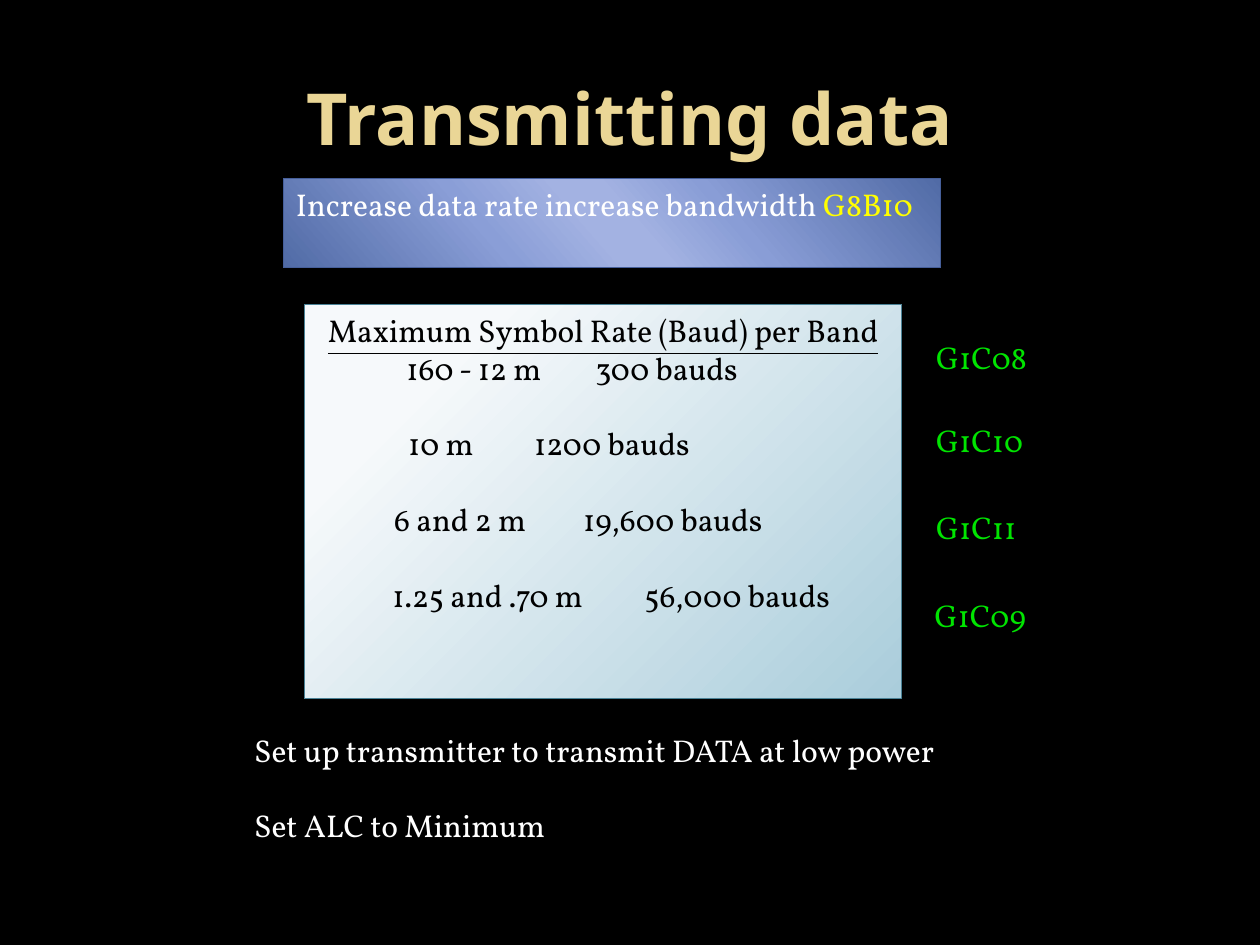
from lxml.etree import SubElement
from pptx import Presentation
from pptx.dml.color import RGBColor
from pptx.enum.shapes import MSO_SHAPE
from pptx.enum.text import MSO_ANCHOR as ANCHOR, PP_ALIGN as ALIGN
from pptx.oxml.ns import qn
from pptx.util import Pt

BLACK = RGBColor(0x00, 0x00, 0x00)
WHITE = RGBColor(0xFF, 0xFF, 0xFF)
GOLD = RGBColor(0xEA, 0xD6, 0x96)
YELLOW = RGBColor(0xFF, 0xFF, 0x00)
GREEN = RGBColor(0x00, 0xE4, 0x00)
BLUE_EDGE = RGBColor(0x46, 0x5F, 0x9A)
TEAL_EDGE = RGBColor(0x4A, 0x82, 0x96)
NAVY = RGBColor(0x51, 0x6B, 0xA6)
LILAC = RGBColor(0xA3, 0xB2, 0xE2)
BANNER_STOPS = [(0, NAVY), (33, RGBColor(0x89, 0x9D, 0xD6)), (47, LILAC),
                (53, LILAC), (68, RGBColor(0x8A, 0x9E, 0xD7)), (100, NAVY)]
PANEL_STOPS = [(20, RGBColor(0xF6, 0xF9, 0xFB)), (100, RGBColor(0xAA, 0xCD, 0xDB))]

# Content
TITLE = "Transmitting data"
BANNER = [("Increase data rate increase bandwidth ", WHITE), ("G8B10", YELLOW)]
HEADING = "Maximum Symbol Rate (Baud) per Band"
RATES = [  # band, its indent, rate, centre of the rate
    ("160 - 12 m", 51, "300 bauds", 235),
    ("10 m", 52, "1200 bauds", 231),
    ("6 and 2 m", 44, "19,600 bauds", 231),
    ("1.25 and .70 m", 43, "56,000 bauds", 231),
]
CODES = [  # question code, left, top
    ("G1C08", 527.8, 189.4),
    ("G1C10", 527.8, 236.9),
    ("G1C11", 527.8, 286.6),
    ("G1C09", 527, 337),
]
NOTES = ["Set up transmitter to transmit DATA at low power", "Set ALC to Minimum"]
LINE_GAP = 21.6  # one empty line of 18 pt text


def add_text(p, text, color=WHITE, size=18, font="Vollkorn", bold=False,
             underline=False, align=ALIGN.LEFT, before=0):
    p.alignment = align
    p.space_before = Pt(before)
    r = p.add_run()
    r.text = text
    r.font.name, r.font.size = font, Pt(size)
    r.font.bold, r.font.underline = bold, underline
    r.font.color.rgb = color


def add_box(slide, left, top, width, height, anchor=ANCHOR.TOP):
    tf = slide.shapes.add_textbox(Pt(left), Pt(top), Pt(width), Pt(height)).text_frame
    tf.word_wrap = True
    tf.vertical_anchor = anchor
    return tf


def add_panel(slide, left, top, width, height, stops, edge, angle=None):
    """Rectangle with a linear gradient, or a radial one from its top left corner."""
    sp = slide.shapes.add_shape(MSO_SHAPE.RECTANGLE, Pt(left), Pt(top),
                                Pt(width), Pt(height))
    sp.shadow.inherit = False
    sp.line.color.rgb, sp.line.width = edge, Pt(0.75)
    sp.fill.gradient()
    grad = sp._element.spPr.find(qn("a:gradFill"))
    for child in list(grad):
        grad.remove(child)
    gs_list = SubElement(grad, qn("a:gsLst"))
    for pos, color in stops:
        gs = SubElement(gs_list, qn("a:gs"), pos=str(pos * 1000))
        SubElement(gs, qn("a:srgbClr"), val=str(color))
    if angle is None:
        radial = SubElement(grad, qn("a:path"), path="circle")
        SubElement(radial, qn("a:fillToRect"), l="-15000", t="-15000",
                   r="115000", b="115000")
    else:
        SubElement(grad, qn("a:lin"), ang=str(angle * 60000), scaled="0")
    tf = sp.text_frame
    tf.word_wrap = True
    tf.vertical_anchor = ANCHOR.TOP
    return tf


def set_columns(p, indent, centre):
    """Indent the first column and centre the second on a tab stop."""
    pPr = p._p.get_or_add_pPr()
    pPr.set("marL", str(Pt(indent)))
    pPr.set("indent", "0")
    tabs = SubElement(pPr, qn("a:tabLst"))
    SubElement(tabs, qn("a:tab"), pos=str(Pt(centre)), algn="ctr")


prs = Presentation()
prs.slide_width, prs.slide_height = Pt(720), Pt(540)
s = prs.slides.add_slide(prs.slide_layouts[6])
s.background.fill.solid()
s.background.fill.fore_color.rgb = BLACK

# Title
tf = add_box(s, 36, 21.6, 648, 90, ANCHOR.MIDDLE)
add_text(tf.paragraphs[0], TITLE, GOLD, size=41, font="Noto Sans", bold=True,
         align=ALIGN.CENTER)

# Bandwidth banner
tf = add_panel(s, 162, 102, 375.4, 51, BANNER_STOPS, BLUE_EDGE, angle=139)
for text, color in BANNER:
    add_text(tf.paragraphs[0], text, color)

# Symbol rate panel
tf = add_panel(s, 174.2, 174.2, 341, 225, PANEL_STOPS, TEAL_EDGE)
add_text(tf.paragraphs[0], HEADING, BLACK, underline=True, align=ALIGN.CENTER)
for i, (band, indent, rate, centre) in enumerate(RATES):
    p = tf.add_paragraph()
    set_columns(p, indent, centre)
    add_text(p, f"{band}\t{rate}", BLACK, before=LINE_GAP if i else 0)

# Question codes
for code, left, top in CODES:
    add_text(add_box(s, left, top, 70, 29).paragraphs[0], code, GREEN)

# Operating notes
tf = add_box(s, 138.2, 414, 417.6, 72.7)
for i, note in enumerate(NOTES):
    p = tf.add_paragraph() if i else tf.paragraphs[0]
    add_text(p, note, before=LINE_GAP if i else 0)

prs.save("out.pptx")
